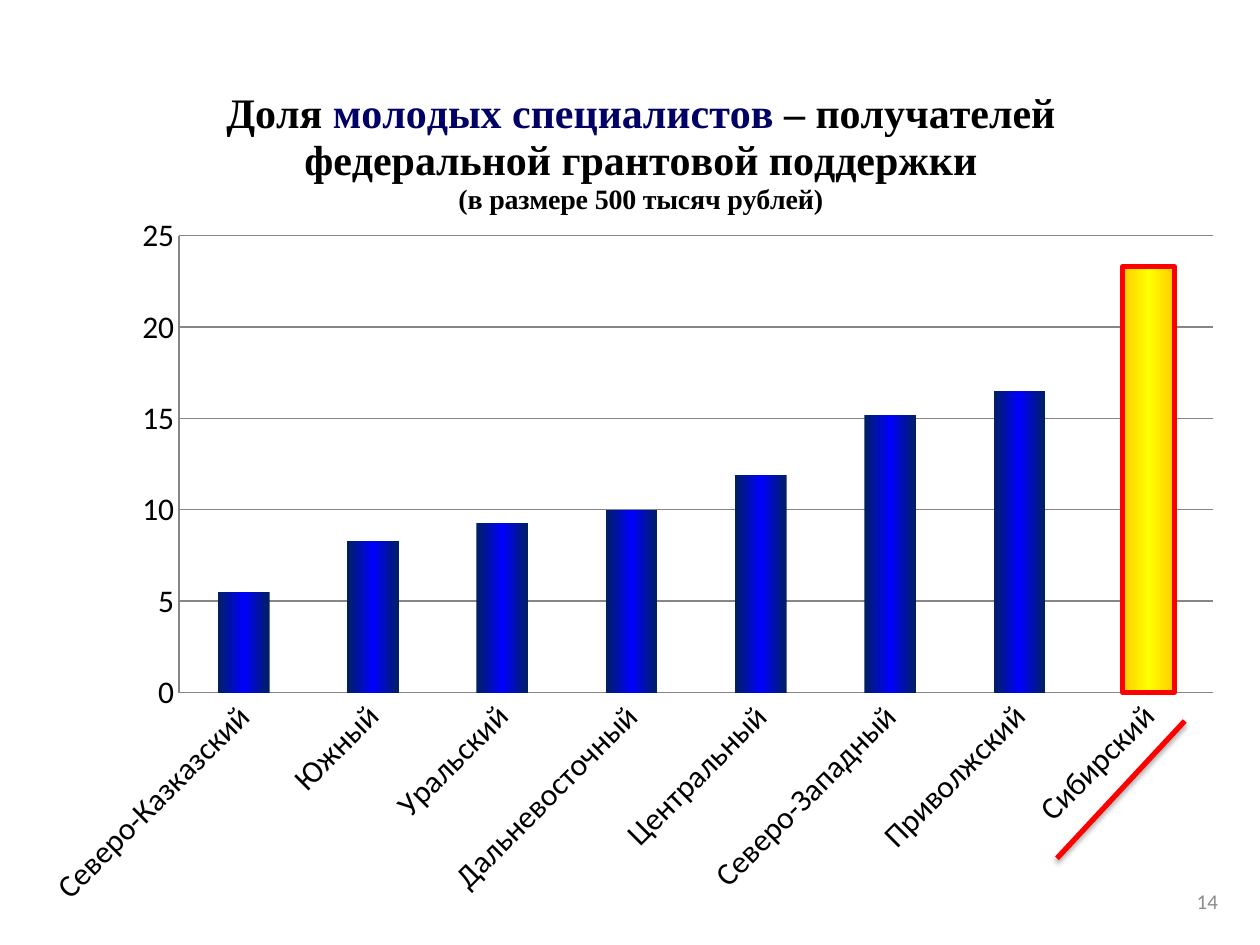
from lxml import etree
from pptx import Presentation
from pptx.chart.data import CategoryChartData
from pptx.dml.color import RGBColor
from pptx.enum.chart import XL_CHART_TYPE, XL_TICK_MARK
from pptx.enum.shapes import MSO_CONNECTOR
from pptx.enum.text import MSO_ANCHOR, PP_ALIGN
from pptx.oxml import parse_xml
from pptx.oxml.ns import nsdecls
from pptx.util import Pt

COLUMNS = XL_CHART_TYPE.COLUMN_CLUSTERED
NO_TICKS = XL_TICK_MARK.NONE
STRAIGHT = MSO_CONNECTOR.STRAIGHT
MIDDLE = MSO_ANCHOR.MIDDLE
RIGHT = PP_ALIGN.RIGHT

COLORS = {
    "text": "000000",
    "accent": "000066",
    "bar_edge": "002060",
    "bar_middle": "0000FF",
    "leader_edge": "FFCC00",
    "leader_middle": "FFFF00",
    "mark": "FF0000",
    "grid": "868686",
    "page": "8C8C8C",
}

SHARES = {
    "Северо-Казказский": 5.5,
    "Южный": 8.3,
    "Уральский": 9.3,
    "Дальневосточный": 10,
    "Центральный": 11.9,
    "Северо-Западный": 15.2,
    "Приволжский": 16.5,
    "Сибирский": 23.3,
}

# Each title line is a list of (text, size, colour) runs
TITLE = [
    [("Доля ", 24, "text"), ("молодых специалистов", 24, "accent"),
     (" – получателей федеральной грантовой поддержки", 24, "text")],
    [("(в размере 500 тысяч рублей)", 16, "text")],
]


def rgb(name):
    return RGBColor.from_string(COLORS[name])


def style_font(font, size, color, face="Calibri", bold=False):
    font.size = Pt(size)
    font.name = face
    font.bold = bold
    font.color.rgb = rgb(color)


def style_line(line, color, width):
    line.color.rgb = rgb(color)
    line.width = Pt(width)


def shade_bar(fill, owner, fill_path, edge, middle):
    """Fill with a horizontal gradient: edge, middle, edge."""
    fill.solid()
    solid = owner.xpath(fill_path)[0]
    stops = "".join(
        f'<a:gs pos="{pos}"><a:srgbClr val="{COLORS[name]}"/></a:gs>'
        for pos, name in ((0, edge), (50000, middle), (100000, edge)))
    gradient = parse_xml(
        f'<a:gradFill {nsdecls("a")} rotWithShape="1"><a:gsLst>{stops}</a:gsLst>'
        '<a:lin ang="0" scaled="0"/></a:gradFill>')
    solid.getparent().replace(solid, gradient)


def set_plot_area(chart, x, y, w, h):
    plot_area = chart._chartSpace.xpath("c:chart/c:plotArea")[0]
    for old in plot_area.xpath("c:layout"):
        plot_area.remove(old)
    values = (("layoutTarget", "inner"), ("xMode", "edge"), ("yMode", "edge"),
              ("x", x), ("y", y), ("w", w), ("h", h))
    parts = "".join(f'<c:{tag} val="{value}"/>' for tag, value in values)
    plot_area.insert(0, parse_xml(
        f'<c:layout {nsdecls("c")}><c:manualLayout>{parts}</c:manualLayout></c:layout>'))


def add_chart_title(chart):
    frame = chart.chart_title.text_frame
    for index, line in enumerate(TITLE):
        paragraph = frame.add_paragraph() if index else frame.paragraphs[0]
        for text, size, color in line:
            run = paragraph.add_run()
            run.text = text
            style_font(run.font, size, color, "Times New Roman", bold=True)
    chart.chart_title.include_in_layout = False


def style_axes(chart):
    districts, shares = chart.category_axis, chart.value_axis
    for axis in (districts, shares):
        axis.major_tick_mark = axis.minor_tick_mark = NO_TICKS
        style_font(axis.tick_labels.font, 18, "text")
        style_line(axis.format.line, "grid", 0.75)
    districts._element.xpath("c:txPr/a:bodyPr")[0].set("rot", "-2700000")
    shares.minimum_scale, shares.maximum_scale, shares.major_unit = 0, 25, 5
    shares.tick_labels.number_format = "General"
    shares.tick_labels.number_format_is_linked = False
    style_line(shares.major_gridlines.format.line, "grid", 0.75)


def add_share_chart(slide, left, top, width, height):
    data = CategoryChartData()
    data.categories = list(SHARES)
    data.add_series("Series 1", list(SHARES.values()))
    chart = slide.shapes.add_chart(
        COLUMNS, Pt(left), Pt(top), Pt(width), Pt(height), data).chart
    style_font(chart.font, 18, "text")
    chart.has_legend = False
    add_chart_title(chart)
    style_axes(chart)
    set_plot_area(chart, 0.109, 0.199, 0.876, 0.516)

    # Columns, with the leading district highlighted
    plot = chart.plots[0]
    plot.gap_width = 150
    plot.vary_by_categories = False
    series = plot.series[0]
    series.invert_if_negative = False
    shade_bar(series.format.fill, series._element, "c:spPr/a:solidFill",
              "bar_edge", "bar_middle")
    leader = series.points[len(SHARES) - 1].format
    shade_bar(leader.fill, series._element, "c:dPt/c:spPr/a:solidFill",
              "leader_edge", "leader_middle")
    style_line(leader.line, "mark", 3)


def add_underline(slide, x1, y1, x2, y2):
    underline = slide.shapes.add_connector(STRAIGHT, Pt(x1), Pt(y1), Pt(x2), Pt(y2))
    style_line(underline.line, "mark", 3)
    effects = etree.SubElement(underline._element.spPr, "{%s}effectLst" %
                               "http://schemas.openxmlformats.org/drawingml/2006/main")
    effects.append(parse_xml(
        f'<a:outerShdw {nsdecls("a")} blurRad="{Pt(3.1)}" dist="{Pt(1.8)}" '
        'dir="5400000" rotWithShape="0"><a:srgbClr val="000000">'
        '<a:alpha val="35000"/></a:srgbClr></a:outerShdw>'))


def add_page_number(slide, number, left, top, width, height):
    frame = slide.shapes.add_textbox(Pt(left), Pt(top), Pt(width), Pt(height)).text_frame
    frame.word_wrap = True
    frame.vertical_anchor = MIDDLE
    paragraph = frame.paragraphs[0]
    paragraph.text = number
    paragraph.alignment = RIGHT
    style_font(paragraph.runs[0].font, 12, "page")


def main():
    prs = Presentation()
    prs.slide_width, prs.slide_height = Pt(720), Pt(540)
    slide = prs.slides.add_slide(prs.slide_layouts[6])
    add_share_chart(slide, 28, 34, 675.5, 506)
    add_underline(slide, 677, 412, 604, 490.5)
    add_page_number(slide, "14", 535, 500.5, 168, 28.75)
    prs.save("out.pptx")


if __name__ == "__main__":
    main()
